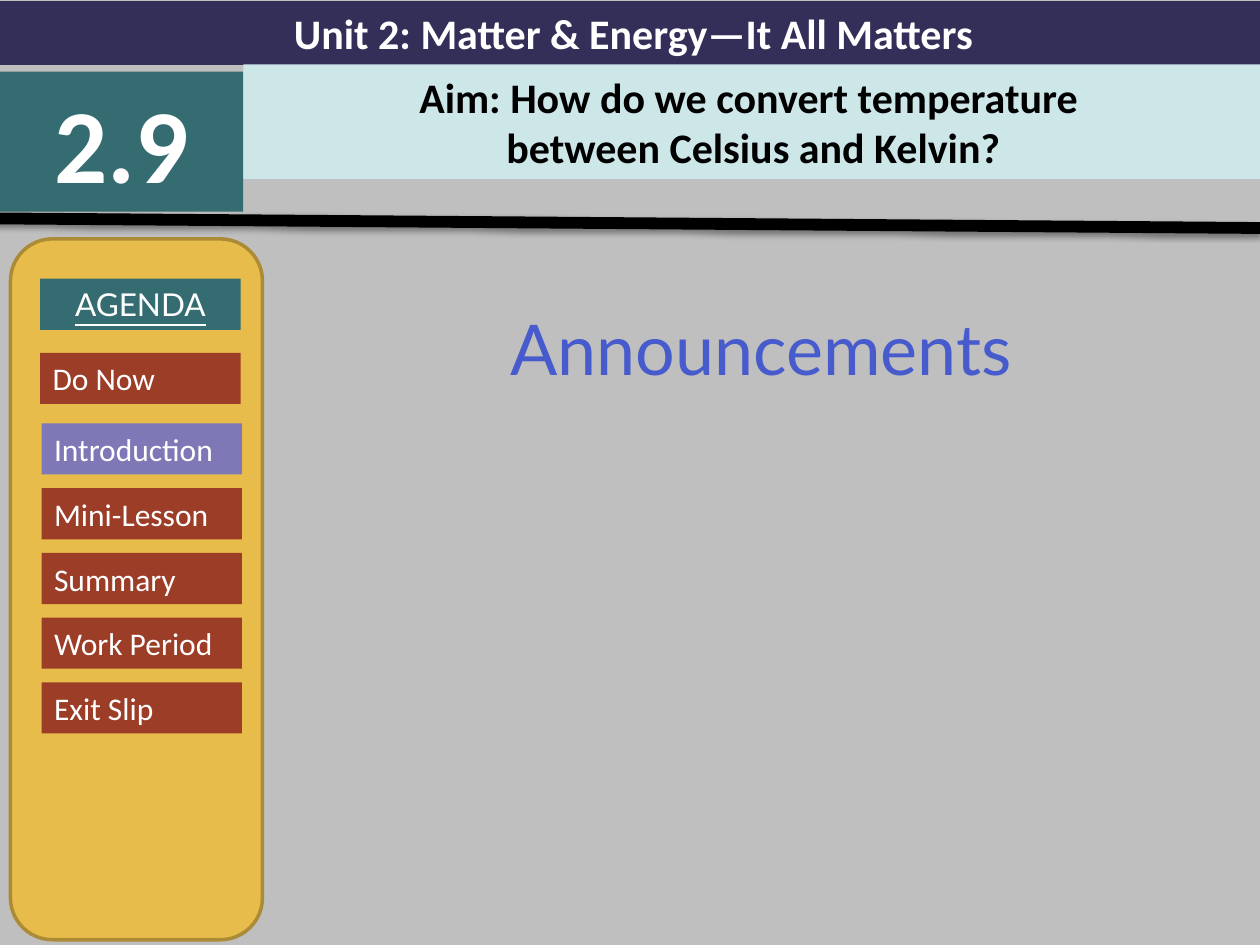
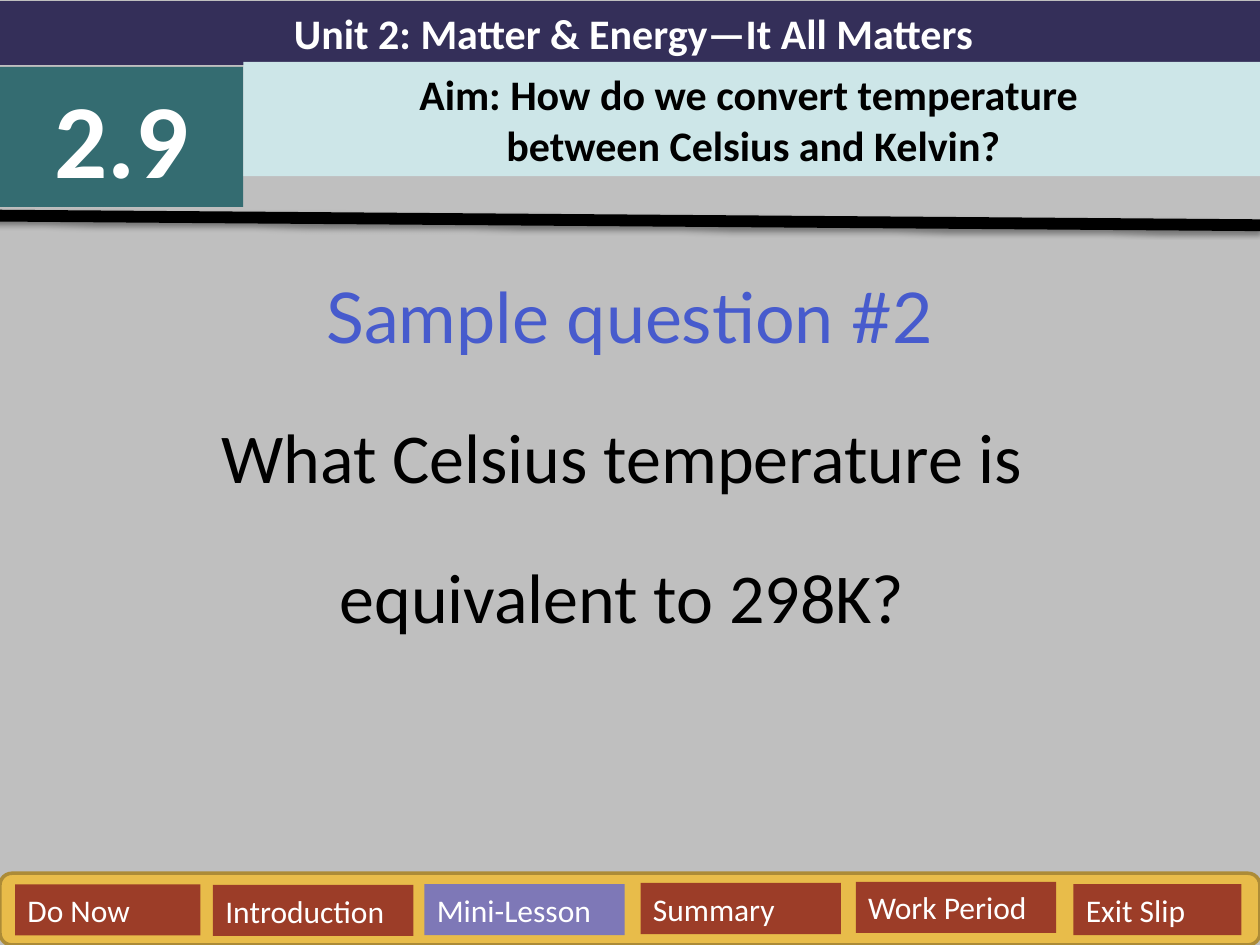
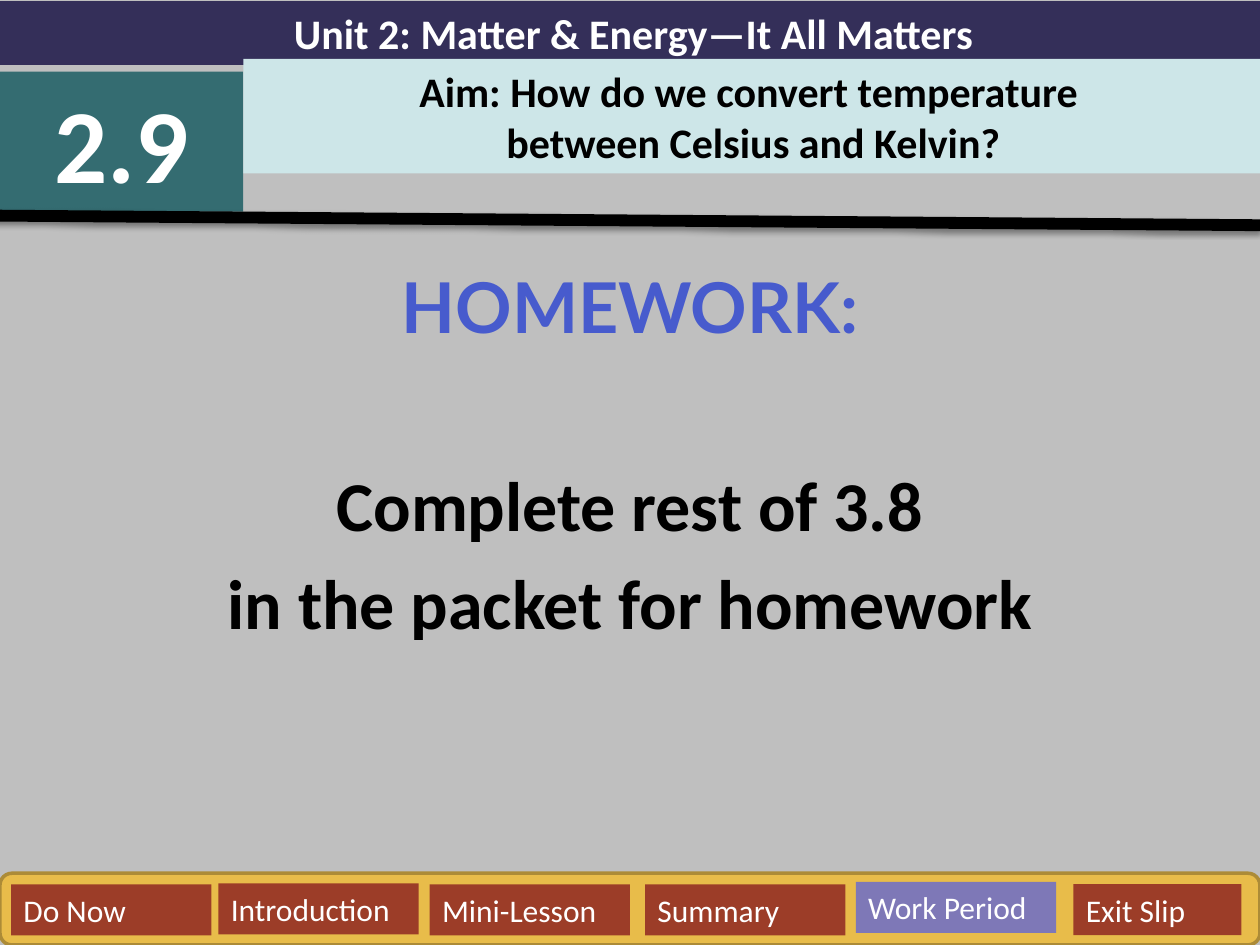
from dataclasses import dataclass

from lxml.etree import SubElement
from pptx import Presentation
from pptx.dml.color import RGBColor
from pptx.enum.shapes import MSO_CONNECTOR, MSO_SHAPE
from pptx.enum.text import MSO_ANCHOR, PP_ALIGN
from pptx.oxml.ns import qn
from pptx.shapes.autoshape import Shape
from pptx.slide import Slide
from pptx.text.text import TextFrame
from pptx.util import Pt

GREY = RGBColor(0xBF, 0xBF, 0xBF)
NAVY = RGBColor(0x34, 0x2F, 0x59)
TEAL = RGBColor(0x34, 0x6C, 0x71)
PALE_TEAL = RGBColor(0xCD, 0xE6, 0xE8)
GOLD = RGBColor(0xE8, 0xBC, 0x4A)
DARK_GOLD = RGBColor(0xAC, 0x8B, 0x37)
RUST = RGBColor(0x9C, 0x3D, 0x28)
LILAC = RGBColor(0x7E, 0x78, 0xB7)
BLUE = RGBColor(0x47, 0x5B, 0xCD)
BLACK = RGBColor(0x00, 0x00, 0x00)
WHITE = RGBColor(0xFF, 0xFF, 0xFF)

BODY_FONT = "Calibri"
HEADING_FONT = "Lato"
STAGES = ("Do Now", "Introduction", "Mini-Lesson", "Summary", "Work Period", "Exit Slip")


@dataclass(frozen=True)
class Area:
    left: float
    top: float
    width: float
    height: float

    def lengths(self) -> tuple[Pt, Pt, Pt, Pt]:
        return Pt(self.left), Pt(self.top), Pt(self.width), Pt(self.height)


@dataclass(frozen=True)
class Style:
    size: float
    color: RGBColor
    font: str = BODY_FONT
    bold: bool = False
    underline: bool = False
    align: PP_ALIGN = PP_ALIGN.CENTER


@dataclass(frozen=True)
class Line:
    text: str
    style: Style
    before: float = 8
    spacing: float = 1.0


@dataclass(frozen=True)
class Lesson:
    number_top: float
    aim_top: float
    rule_top: float
    body: Area
    lines: tuple[Line, ...]
    agenda: Area
    agenda_title: Area | None
    stages: tuple[Area, ...]
    current: str


UNIT = Style(24, WHITE, bold=True)
NUMBER = Style(60, WHITE, bold=True)
AIM = Style(24, BLACK, bold=True)
AGENDA = Style(18, WHITE, HEADING_FONT, underline=True)
STAGE = Style(18, WHITE, align=PP_ALIGN.LEFT)
HEADING = Style(40, BLUE, HEADING_FONT)
BOLD_HEADING = Style(40, BLUE, HEADING_FONT, bold=True)
BODY = Style(40, BLACK)
BOLD_BODY = Style(40, BLACK, bold=True)

STAGE_WIDTH = 114.5
STAGE_HEIGHT = 29.2
BOTTOM_AGENDA = Area(0, 499, 720, 41)
SIDE_STAGES = (Area(23, 201.6, STAGE_WIDTH, STAGE_HEIGHT),) + tuple(
    Area(23.8, 242 + 37 * row, STAGE_WIDTH, STAGE_HEIGHT) for row in range(5)
)


def bottom_stages(
    lefts: tuple[float, ...], tops: tuple[float, ...], first_width: float
) -> tuple[Area, ...]:
    widths = (first_width, *[STAGE_WIDTH] * 4, 96)
    return tuple(
        Area(left, top, width, STAGE_HEIGHT)
        for left, top, width in zip(lefts, tops, widths)
    )


LESSONS = (
    Lesson(
        number_top=41,
        aim_top=36.8,
        rule_top=124.8,
        body=Area(150, 147, 570, 393),
        lines=(Line("Announcements", HEADING, spacing=1.5),),
        agenda=Area(6, 136.5, 144, 400.5),
        agenda_title=Area(23, 159.3, STAGE_WIDTH, STAGE_HEIGHT),
        stages=SIDE_STAGES,
        current="Introduction",
    ),
    Lesson(
        number_top=38.2,
        aim_top=35.3,
        rule_top=123.2,
        body=Area(0, 129, 720, 371),
        lines=(
            Line("Sample question #2", HEADING, spacing=1.5),
            Line("What Celsius temperature is ", BODY, spacing=1.5),
            Line("equivalent to 298K? ", BODY, spacing=1.5),
        ),
        agenda=BOTTOM_AGENDA,
        agenda_title=None,
        stages=bottom_stages(
            (8.6, 121.7, 242.5, 366, 489, 613.4),
            (505.4, 505.7, 505.2, 504.6, 503.9, 505.2),
            106,
        ),
        current="Mini-Lesson",
    ),
    Lesson(
        number_top=41,
        aim_top=33.7,
        rule_top=123.2,
        body=Area(0, 147, 720, 393),
        lines=(
            Line("HOMEWORK:", BOLD_HEADING),
            Line("Complete rest of 3.8", BOLD_BODY, before=65),
            Line("in the packet for homework", BOLD_BODY),
        ),
        agenda=BOTTOM_AGENDA,
        agenda_title=None,
        stages=bottom_stages(
            (6.3, 124.8, 245.5, 368.6, 489, 613.4),
            (505.4, 504.8, 505.4, 505.4, 503.9, 505.2),
            STAGE_WIDTH,
        ),
        current="Work Period",
    ),
)


def write_lines(frame: TextFrame, lines: tuple[Line, ...]) -> None:
    frame.word_wrap = True
    for index, line in enumerate(lines):
        para = frame.paragraphs[0] if index == 0 else frame.add_paragraph()
        para.alignment = line.style.align
        para.space_before = Pt(line.before)
        para.line_spacing = line.spacing
        span = para.add_run()
        span.text = line.text
        span.font.name = line.style.font
        span.font.size = Pt(line.style.size)
        span.font.bold = line.style.bold
        span.font.underline = line.style.underline
        span.font.color.rgb = line.style.color


def add_panel(
    page: Slide, area: Area, fill: RGBColor, kind: MSO_SHAPE = MSO_SHAPE.RECTANGLE
) -> Shape:
    panel = page.shapes.add_shape(kind, *area.lengths())
    panel.shadow.inherit = False
    panel.fill.solid()
    panel.fill.fore_color.rgb = fill
    panel.line.fill.background()
    return panel


def add_label(page: Slide, area: Area, fill: RGBColor, style: Style, *texts: str) -> None:
    frame = add_panel(page, area, fill).text_frame
    frame.vertical_anchor = MSO_ANCHOR.MIDDLE
    write_lines(frame, tuple(Line(text, style, before=0) for text in texts))


def add_rule(page: Slide, top: float) -> None:
    rule = page.shapes.add_connector(
        MSO_CONNECTOR.STRAIGHT, Pt(-3.6), Pt(top), Pt(720), Pt(top + 5.5)
    )
    rule.line.color.rgb = BLACK
    rule.line.width = Pt(6.75)
    effects = SubElement(rule._element.spPr, qn("a:effectLst"))
    shadow = SubElement(
        effects,
        qn("a:outerShdw"),
        blurRad=str(Pt(3.1)),
        dist=str(Pt(1.6)),
        dir="5400000",
        rotWithShape="0",
    )
    color = SubElement(shadow, qn("a:srgbClr"), val=str(BLACK))
    SubElement(color, qn("a:alpha"), val="38000")


def add_header(page: Slide, lesson: Lesson) -> None:
    add_label(
        page, Area(0, 0.7, 724, 36.4), NAVY, UNIT, "Unit 2: Matter & Energy—It All Matters"
    )
    add_label(page, Area(0, lesson.number_top, 139, 80), TEAL, NUMBER, "2.9")
    add_label(
        page,
        Area(139, lesson.aim_top, 583, 65.4),
        PALE_TEAL,
        AIM,
        "Aim: How do we convert temperature ",
        "between Celsius and Kelvin?",
    )
    add_rule(page, lesson.rule_top)


def add_agenda(page: Slide, lesson: Lesson) -> None:
    panel = add_panel(page, lesson.agenda, GOLD, MSO_SHAPE.ROUNDED_RECTANGLE)
    panel.line.color.rgb = DARK_GOLD
    panel.line.width = Pt(2)
    if lesson.agenda_title:
        add_label(page, lesson.agenda_title, TEAL, AGENDA, "AGENDA")
    for stage, area in zip(STAGES, lesson.stages):
        fill = LILAC if stage == lesson.current else RUST
        add_label(page, area, fill, STAGE, stage)


def main() -> None:
    deck = Presentation()
    deck.slide_width, deck.slide_height = Pt(720), Pt(540)
    for lesson in LESSONS:
        page = deck.slides.add_slide(deck.slide_layouts[6])
        page.background.fill.solid()
        page.background.fill.fore_color.rgb = GREY
        box = page.shapes.add_textbox(*lesson.body.lengths())
        write_lines(box.text_frame, lesson.lines)
        add_header(page, lesson)
        add_agenda(page, lesson)
    deck.save("out.pptx")


if __name__ == "__main__":
    main()
